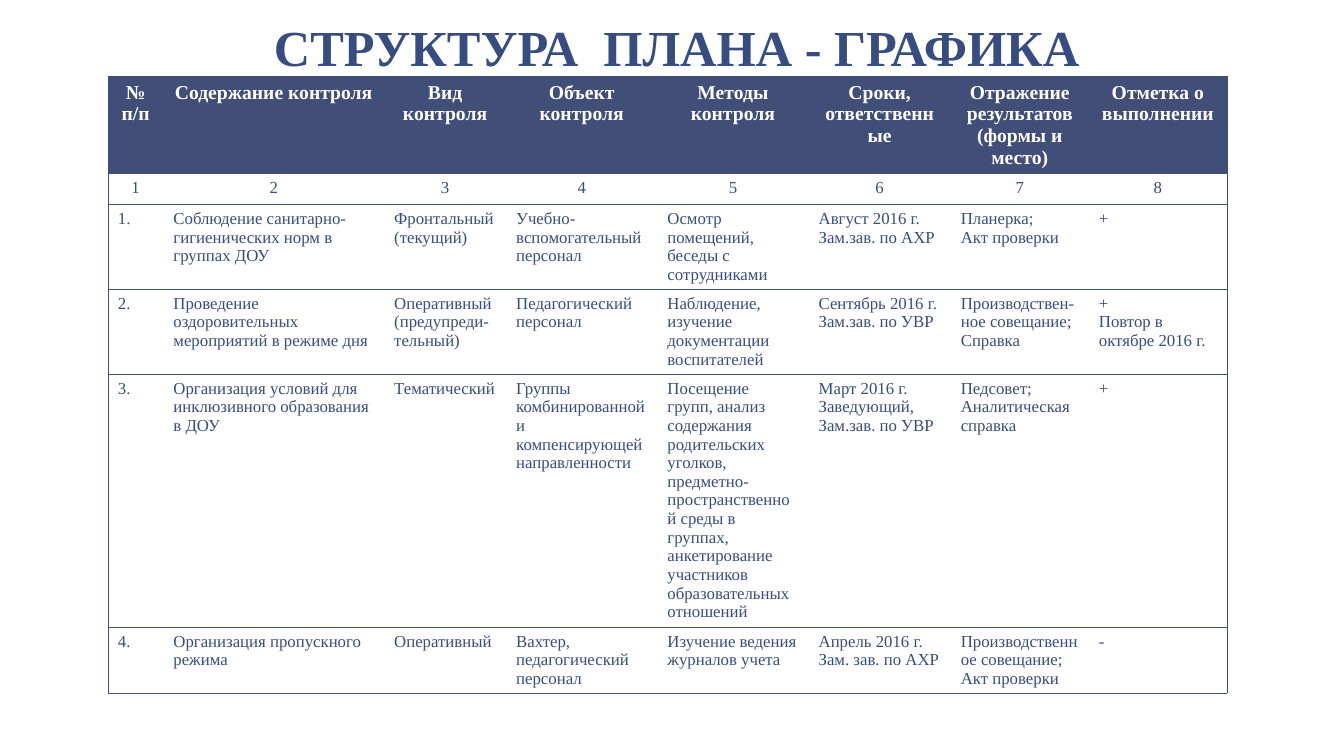
from lxml.etree import SubElement
from pptx import Presentation
from pptx.dml.color import RGBColor
from pptx.enum.text import MSO_ANCHOR, PP_ALIGN
from pptx.oxml.ns import qn
from pptx.util import Inches, Pt

FONT = "Times New Roman"
INK = RGBColor(0x37, 0x4C, 0x81)
HEADER_FILL = RGBColor(0x41, 0x4E, 0x77)
WHITE = RGBColor(0xFF, 0xFF, 0xFF)

TITLE = "СТРУКТУРА  ПЛАНА - ГРАФИКА "
HEADERS = [
    "№ п/п", "Содержание контроля", "Вид контроля", "Объект контроля",
    "Методы контроля", "Сроки, ответственные",
    "Отражение результатов (формы и место)", "Отметка о выполнении",
]
CHECKS = [
    ["Соблюдение санитарно-гигиенических норм в группах ДОУ",
     "Фронтальный\n(текущий)",
     "Учебно-вспомогательный персонал",
     "Осмотр помещений, беседы с сотрудниками",
     "Август 2016 г.\nЗам.зав. по АХР",
     "Планерка;\nАкт проверки",
     "+"],
    ["Проведение оздоровительных мероприятий в режиме дня",
     "Оперативный (предупреди-тельный)",
     "Педагогический персонал",
     "Наблюдение, изучение документации воспитателей",
     "Сентябрь 2016 г.\nЗам.зав. по УВР",
     "Производствен-ное совещание;\nСправка",
     "+\nПовтор в октябре 2016 г."],
    ["Организация условий для инклюзивного образования в ДОУ",
     "Тематический",
     "Группы комбинированной и компенсирующей направленности",
     "Посещение групп, анализ содержания родительских уголков, "
     "предметно-пространственной среды в группах, анкетирование "
     "участников образовательных отношений",
     "Март 2016 г.\nЗаведующий,\nЗам.зав. по УВР",
     "Педсовет;\nАналитическая справка",
     "+"],
    ["Организация пропускного режима",
     "Оперативный",
     "Вахтер, педагогический персонал",
     "Изучение ведения журналов учета",
     "Апрель 2016 г.\nЗам. зав. по АХР",
     "Производственное совещание; Акт проверки",
     "-"],
]
COLUMN_WIDTHS = [0.55, 2.19, 1.21, 1.5, 1.5, 1.41, 1.37, 1.37]
ROW_HEIGHTS = [0.96, 0.31, 0.84, 0.84, 2.51, 0.65]


def format_text(frame, size, color, bold, align):
    for paragraph in frame.paragraphs:
        paragraph.alignment = align
        for run in paragraph.runs:
            run.font.name = FONT
            run.font.size = Pt(size)
            run.font.bold = bold
            run.font.color.rgb = color


def set_borders(cell, visible_sides):
    """Draw the named sides (L, R, T, B) and hide the others."""
    properties = cell._tc.get_or_add_tcPr()
    for side in "LRTB":
        line = SubElement(properties, qn(f"a:ln{side}"), w=str(Pt(0.5)))
        if side in visible_sides:
            fill = SubElement(line, qn("a:solidFill"))
            SubElement(fill, qn("a:srgbClr"), val=str(HEADER_FILL))
        else:
            SubElement(line, qn("a:noFill"))


def add_title(slide):
    title = slide.shapes.title
    title.left, title.top = Inches(1.22), Inches(0.08)
    title.width, title.height = Inches(11.11), Inches(0.75)
    frame = title.text_frame
    frame.text = TITLE
    frame.word_wrap = True
    frame.vertical_anchor = MSO_ANCHOR.BOTTOM
    frame.margin_left = frame.margin_right = Inches(0.13)
    frame.margin_top = frame.margin_bottom = Inches(0.07)
    frame.paragraphs[0].line_spacing = 0.85
    format_text(frame, 36, INK, True, PP_ALIGN.CENTER)


def add_plan(slide):
    numbers = [str(n) for n in range(1, len(HEADERS) + 1)]
    checks = [[f"{n}.", *check] for n, check in enumerate(CHECKS, 1)]
    rows = [HEADERS, numbers, *checks]
    plan = slide.shapes.add_table(
        len(rows), len(HEADERS), Inches(1.07), Inches(0.76),
        Inches(sum(COLUMN_WIDTHS)), Inches(sum(ROW_HEIGHTS))).table
    plan.horz_banding = False
    for column, width in zip(plan.columns, COLUMN_WIDTHS):
        column.width = Inches(width)
    for row, height in zip(plan.rows, ROW_HEIGHTS):
        row.height = Inches(height)

    last = len(HEADERS) - 1
    for r, texts in enumerate(rows):
        for c, text in enumerate(texts):
            cell = plan.cell(r, c)
            cell.text_frame.text = text
            set_borders(cell, "TB" + "L" * (c == 0) + "R" * (c == last))
            if r == 0:
                cell.fill.solid()
                cell.fill.fore_color.rgb = HEADER_FILL
                format_text(cell.text_frame, 14, WHITE, True, PP_ALIGN.CENTER)
            else:
                cell.fill.background()
                align = PP_ALIGN.CENTER if r == 1 else PP_ALIGN.LEFT
                format_text(cell.text_frame, 12, INK, False, align)


def main():
    deck = Presentation()
    deck.slide_width, deck.slide_height = Inches(13.33), Inches(7.5)
    slide = deck.slides.add_slide(deck.slide_layouts[5])
    add_title(slide)
    add_plan(slide)
    deck.save("out.pptx")


if __name__ == "__main__":
    main()
